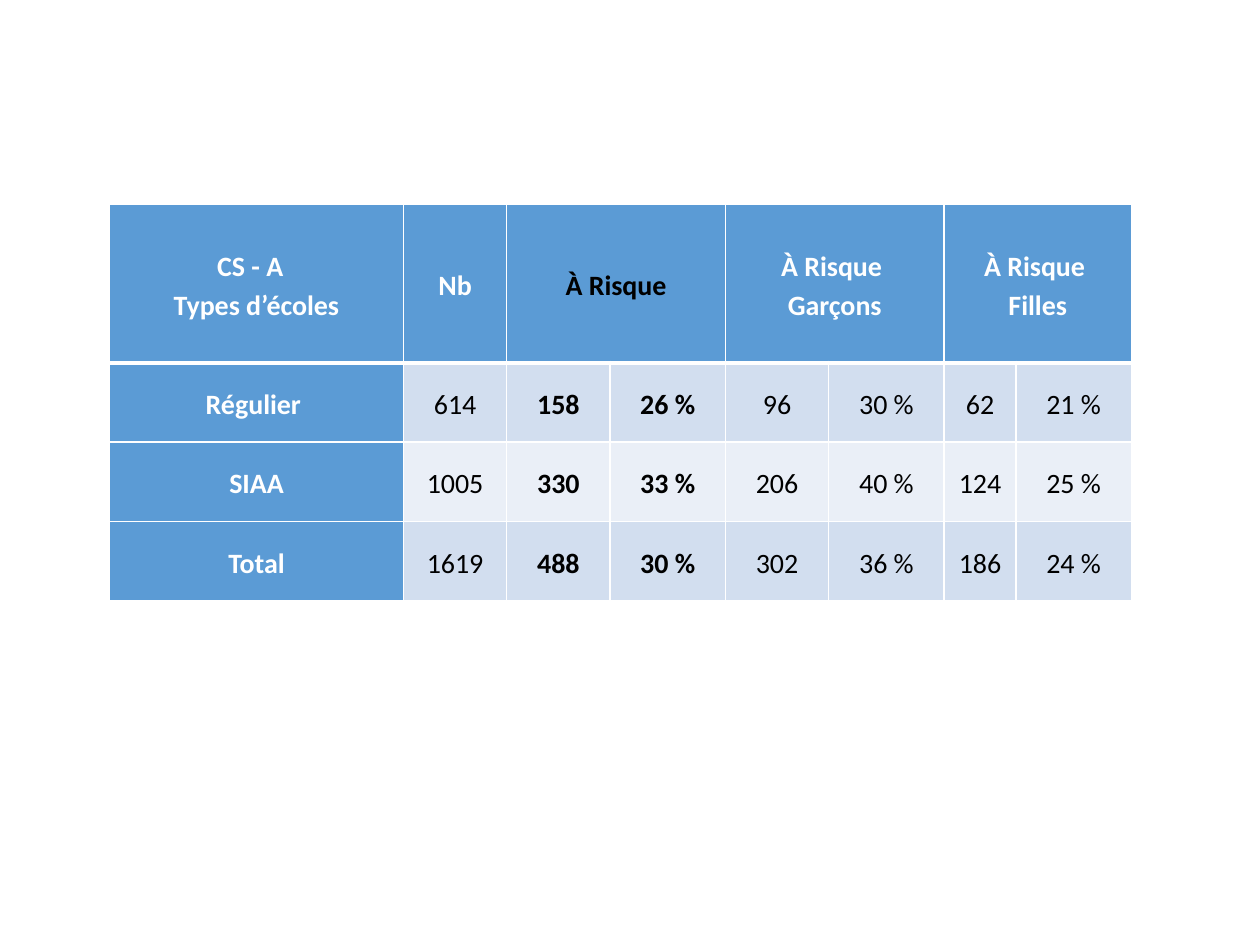
from lxml.etree import SubElement
from pptx import Presentation
from pptx.dml.color import RGBColor
from pptx.enum.text import MSO_ANCHOR as Anchor, PP_ALIGN as Align
from pptx.oxml.ns import qn
from pptx.util import Pt

COLORS = {
    "blue": "5B9BD5",
    "band_dark": "D2DEEF",
    "band_light": "EAEFF7",
    "white": "FFFFFF",
    "black": "000000",
}
COLUMNS = [168, 59, 59, 66, 59, 66, 41, 66]
ROWS = [90.6, 45.3, 45.3, 45.3]
HEADERS = {
    0: "CS - A  \nTypes d’écoles",
    1: "Nb",
    2: "À Risque",
    4: "À Risque \nGarçons",
    6: "À Risque \nFilles",
}
SCHOOLS = [
    ["Régulier ", "614", "158", "26 %", "96", "30 %", "62", "21 %"],
    ["SIAA", "1005", "330", "33 %", "206", "40 %", "124", "25 %"],
    ["Total", "1619", "488", "30 %", "302", "36 %", "186", "24 %"],
]
RISK_COLUMNS = (2, 3)


def rgb(name):
    return RGBColor.from_string(COLORS[name])


def write_text(tf, text, color="black", bold=False, size=16):
    for i, line in enumerate(text.split("\n")):
        p = tf.paragraphs[0] if i == 0 else tf.add_paragraph()
        p.alignment = Align.CENTER
        p.line_spacing = 1.15
        r = p.add_run()
        r.text = line
        r.font.name = "Calibri"
        r.font.size = Pt(size)
        r.font.bold = bold
        r.font.color.rgb = rgb(color)


def set_borders(cell, top, bottom):
    tc_pr = cell._tc.get_or_add_tcPr()
    for side, width in {"L": 1, "R": 1, "T": top, "B": bottom}.items():
        ln = SubElement(tc_pr, qn(f"a:ln{side}"), w=str(Pt(width)))
        fill = SubElement(ln, qn("a:solidFill"))
        SubElement(fill, qn("a:srgbClr"), val=COLORS["white"])


def style_cell(cell, fill, top=1, bottom=1):
    set_borders(cell, top, bottom)
    cell.fill.solid()
    cell.fill.fore_color.rgb = rgb(fill)
    cell.vertical_anchor = Anchor.MIDDLE
    cell.margin_left = cell.margin_right = Pt(3.6)
    cell.margin_top = cell.margin_bottom = Pt(0)


def fill_header(table):
    for col in range(len(COLUMNS)):
        style_cell(table.cell(0, col), "blue", bottom=3)
    for col, text in HEADERS.items():
        cell = table.cell(0, col)
        if col >= 2:
            cell.merge(table.cell(0, col + 1))
        color = "black" if col in RISK_COLUMNS else "white"
        write_text(cell.text_frame, text, color=color, bold=True)


def fill_body(table):
    for row, values in enumerate(SCHOOLS, 1):
        band = "band_dark" if row % 2 else "band_light"
        for col, text in enumerate(values):
            cell = table.cell(row, col)
            label = col == 0
            style_cell(cell, "blue" if label else band, top=3 if row == 1 else 1)
            write_text(cell.text_frame, text, color="white" if label else "black",
                       bold=label or col in RISK_COLUMNS)


def add_risk_table(s, left, top):
    frame = s.shapes.add_table(len(ROWS), len(COLUMNS), Pt(left), Pt(top),
                               Pt(sum(COLUMNS)), Pt(sum(ROWS)))
    table = frame.table
    for column, width in zip(table.columns, COLUMNS):
        column.width = Pt(width)
    for row, height in zip(table.rows, ROWS):
        row.height = Pt(height)
    fill_header(table)
    fill_body(table)


def main():
    prs = Presentation()
    prs.slide_width, prs.slide_height = Pt(720), Pt(540)
    s = prs.slides.add_slide(prs.slide_layouts[6])
    add_risk_table(s, 62.6, 116.8)
    prs.save("out.pptx")


if __name__ == "__main__":
    main()
